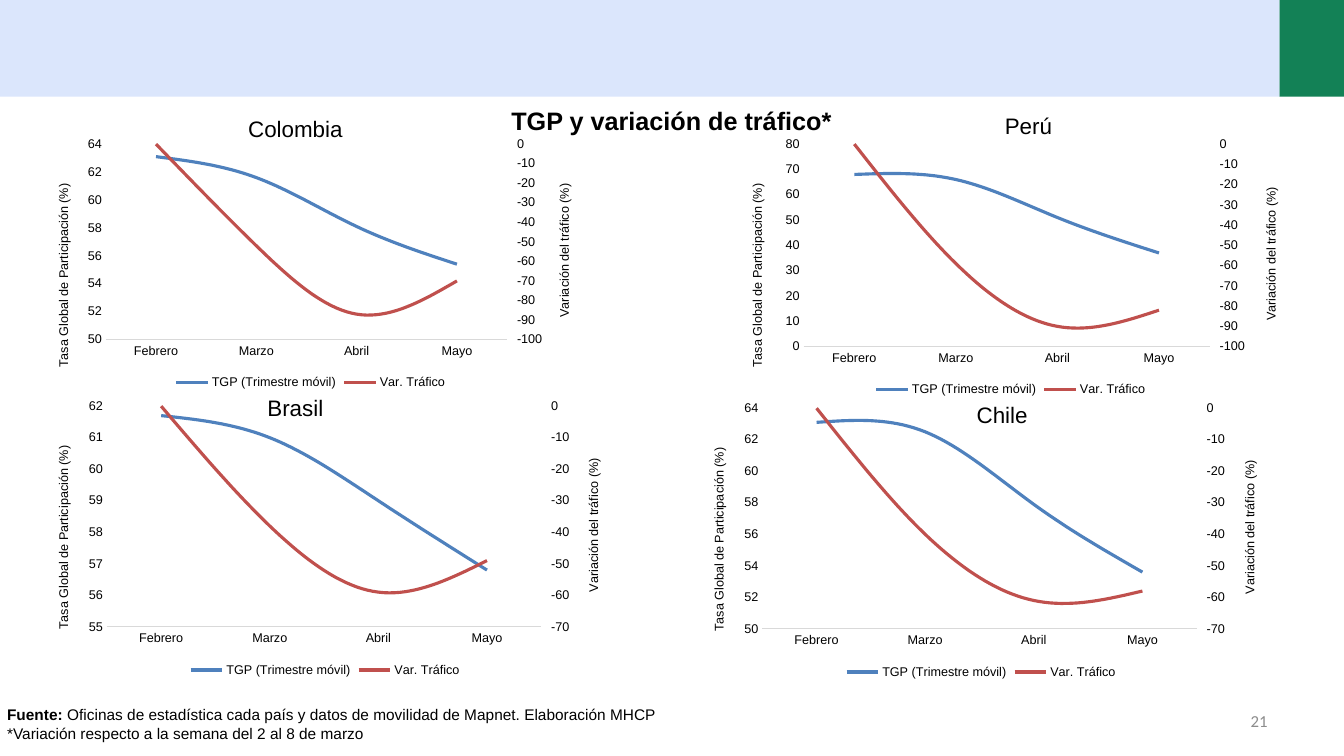
from copy import deepcopy
from lxml import etree
from pptx import Presentation
from pptx.chart.axis import ValueAxis
from pptx.chart.data import CategoryChartData
from pptx.dml.color import RGBColor
from pptx.enum.chart import XL_CHART_TYPE, XL_LEGEND_POSITION, XL_TICK_MARK
from pptx.enum.shapes import MSO_SHAPE
from pptx.enum.text import MSO_ANCHOR, PP_ALIGN
from pptx.oxml.ns import qn
from pptx.util import Inches, Pt

# Content
HEAD = "TGP y variación de tráfico*"
NOTE = [
    [("Fuente: ", True),
     ("Oficinas de estadística cada país y datos de movilidad de Mapnet. "
      "Elaboración MHCP", False)],
    [("*Variación respecto a la semana del 2 al 8 de marzo", False)],
]
PAGE = "21"
MONTHS = ["Febrero", "Marzo", "Abril", "Mayo"]
NAMES = ["TGP (Trimestre móvil)", "Var. Tráfico"]
LEFT = "Tasa Global de Participación (%)"
RIGHT = "Variación del tráfico (%)"
# name box is left, top; scales are min, max, step; sides are plot margins
LANDS = [
    dict(name="Perú", spot=(7.82, 1.06), box=(7.25, 1.31, 5.55, 2.67),
         sides=(0.72, 0.8), rate=[68, 66, 51, 37], flow=[0, -59, -90, -82],
         scales=[(0, 80, 10), (-100, 0, 10)]),
    dict(name="Colombia", spot=(0.55, 1.09), box=(0.37, 1.31, 5.42, 2.6),
         sides=(0.68, 0.76), rate=[63.1, 61.6, 58.1, 55.4], flow=[0, -52, -87, -70],
         scales=[(50, 64, 2), (-100, 0, 10)]),
    dict(name="Chile", spot=(7.56, 3.93), box=(6.87, 3.93, 5.72, 2.85),
         sides=(0.69, 0.72), rate=[63.1, 62.5, 57.9, 53.6], flow=[0, -40, -61, -58],
         scales=[(50, 64, 2), (-70, 0, 10)]),
    dict(name="Brasil", spot=(0.55, 3.86), box=(0.37, 3.91, 5.71, 2.85),
         sides=(0.69, 0.71), rate=[61.7, 61, 59, 56.8], flow=[0, -38, -59, -49],
         scales=[(55, 62, 1), (-70, 0, 10)]),
]
HUES = {"green": "138156", "pale": "DBE6FC", "black": "000000", "gray": "8C8C8C",
        "rule": "D9D9D9", "blue": "4F81BD", "red": "C0504D"}
SMALL = dict(name="Arial", size=Pt(9), bold=False)
TOP, BASE = 0.12, 0.54  # plot margins above and below


def hue(key):
    return RGBColor.from_string(HUES[key])


def apply(item, form):
    for key, val in form.items():
        setattr(item, key, val)


def style(font, form, tint="black"):
    apply(font, form)
    font.color.rgb = hue(tint)


def label(slide, box, rows, form, align=PP_ALIGN.LEFT, tint="black", inset=None):
    frame = slide.shapes.add_textbox(*map(Inches, box)).text_frame
    frame.word_wrap = True
    if inset:
        sides = ("left", "right", "top", "bottom")
        apply(frame, {f"margin_{side}": Inches(inset) for side in sides})
    for num, row in enumerate(rows):
        para = frame.add_paragraph() if num else frame.paragraphs[0]
        para.alignment = align
        for text, bold in row:
            run = para.add_run()
            run.text = text
            style(run.font, dict(form, bold=bold))
            run.font.color.rgb = hue(tint)
    return frame


def place(node, index, spots, inner=False):
    """Give a chart part a manual layout, in shares of the chart size."""
    for old in node.findall(qn("c:layout")):
        node.remove(old)
    outer = etree.Element(qn("c:layout"))
    node.insert(index, outer)
    man = etree.SubElement(outer, qn("c:manualLayout"))
    pairs = [("layoutTarget", "inner")] if inner else []
    pairs += [("xMode", "edge"), ("yMode", "edge"), *spots.items()]
    for tag, val in pairs:
        etree.SubElement(man, qn(f"c:{tag}")).set("val", str(val))


def clear(node, after=None):
    part = etree.Element(qn("c:spPr"))
    etree.SubElement(part, qn("a:noFill"))
    line = etree.SubElement(part, qn("a:ln"))
    etree.SubElement(line, qn("a:noFill"))
    if after is None:
        node.append(part)
    else:
        after.addnext(part)


def set_axis(axis, node, text, scale, spot):
    low, high, step = scale
    apply(axis, dict(minimum_scale=low, maximum_scale=high, major_unit=step))
    frame = axis.axis_title.text_frame
    frame.text = text
    style(frame.paragraphs[0].runs[0].font, SMALL)
    title = node.find(qn("c:title"))
    body = title.find(".//" + qn("a:bodyPr"))
    body.set("rot", "-5400000")
    body.set("vert", "horz")
    place(title, 1, spot)


def add_right(area):
    """Move the second series to its own plot and axes on the right."""
    first = area.find(qn("c:lineChart"))
    second = deepcopy(first)
    first.remove(first.findall(qn("c:ser"))[1])
    second.remove(second.find(qn("c:ser")))
    first.addnext(second)
    cat, val = area.find(qn("c:catAx")), area.find(qn("c:valAx"))
    cat2, val2 = deepcopy(cat), deepcopy(val)
    val.addnext(val2)
    val2.addnext(cat2)
    ids = {cat.find(qn("c:axId")).get("val"): "5001",
           val.find(qn("c:axId")).get("val"): "5002"}
    for part in (second, cat2, val2):
        for tag in ("c:axId", "c:crossAx"):
            for node in part.findall(qn(tag)):
                node.set("val", ids[node.get("val")])
    cat2.find(qn("c:delete")).set("val", "1")
    val2.find(qn("c:axPos")).set("val", "r")
    val2.find(qn("c:crosses")).set("val", "max")
    return val2


def add_graph(slide, land):
    data = CategoryChartData(number_format="General")
    data.categories = MONTHS
    for name, vals in zip(NAMES, (land["rate"], land["flow"])):
        data.add_series(name, vals)
    wide, high = land["box"][2:]
    chart = slide.shapes.add_chart(
        XL_CHART_TYPE.LINE, *map(Inches, land["box"]), data).chart
    style(chart.font, dict(name="Calibri", size=Pt(10)))
    apply(chart, dict(has_title=False, has_legend=True))
    apply(chart.legend, dict(position=XL_LEGEND_POSITION.BOTTOM, include_in_layout=False))
    style(chart.legend.font, SMALL)
    for line, tint in zip(chart.plots[0].series, ("blue", "red")):
        line.smooth = True
        line.format.line.width = Pt(2.25)
        line.format.line.color.rgb = hue(tint)

    # Shared axis look
    cat, val = chart.category_axis, chart.value_axis
    for axis in (cat, val):
        apply(axis, dict(has_major_gridlines=False, major_tick_mark=XL_TICK_MARK.NONE))
        style(axis.tick_labels.font, SMALL)
    cat.format.line.width = Pt(0.75)
    cat.format.line.color.rgb = hue("rule")
    val.format.line.fill.background()
    apply(val.tick_labels, dict(number_format="0", number_format_is_linked=False))

    # Left and right scales
    area = chart.element.find(".//" + qn("c:plotArea"))
    node = add_right(area)
    right = ValueAxis(node)
    right.major_tick_mark = XL_TICK_MARK.OUTSIDE
    tall = high - TOP - BASE
    mid = TOP + tall / 2 - 0.6
    set_axis(val, area.find(qn("c:valAx")), LEFT, land["scales"][0],
             dict(x=0.155 / wide, y=0.49 / high))
    set_axis(right, node, RIGHT, land["scales"][1],
             dict(x=(wide - 0.3) / wide, y=mid / high))

    # Plot frame
    start, end = land["sides"]
    place(area, 0, dict(x=start / wide, y=TOP / high,
                        w=(wide - start - end) / wide, h=tall / high), True)
    clear(area)
    clear(chart.element, chart.element.find(qn("c:chart")))


def main():
    deck = Presentation()
    apply(deck, dict(slide_width=Inches(13.33), slide_height=Inches(7.5)))
    slide = deck.slides.add_slide(deck.slide_layouts[5])

    # Top band
    for left, wide, tint in ((12.69, 0.64, "green"), (0, 12.69, "pale")):
        bar = slide.shapes.add_shape(
            MSO_SHAPE.RECTANGLE, *map(Inches, (left, 0, wide, 0.96)))
        bar.shadow.inherit = False
        bar.fill.solid()
        bar.fill.fore_color.rgb = hue(tint)
        bar.line.fill.background()

    # Title
    head = slide.shapes.title
    apply(head, dict(left=Inches(4.28), top=Inches(0.99),
                     width=Inches(4.76), height=Inches(0.4)))
    head.text_frame.text = HEAD
    para = head.text_frame.paragraphs[0]
    para.alignment = PP_ALIGN.CENTER
    style(para.runs[0].font, dict(name="Arial", size=Pt(18), bold=True))

    # Charts with country names
    for land in LANDS:
        add_graph(slide, land)
    for land in LANDS:
        label(slide, (*land["spot"], 4.76, 0.37), [[(land["name"], False)]],
              dict(name="Arial", size=Pt(16)), PP_ALIGN.CENTER)

    # Source note and page number
    label(slide, (0.02, 6.95, 6.64, 0.66), NOTE,
          dict(name="Arial", size=Pt(11)), inset=0.05)
    page = label(slide, (9.56, 6.95, 3.11, 0.4), [[(PAGE, False)]],
                 dict(name="Calibri", size=Pt(12)), PP_ALIGN.RIGHT, "gray")
    page.vertical_anchor = MSO_ANCHOR.MIDDLE
    deck.save("out.pptx")


if __name__ == "__main__":
    main()
